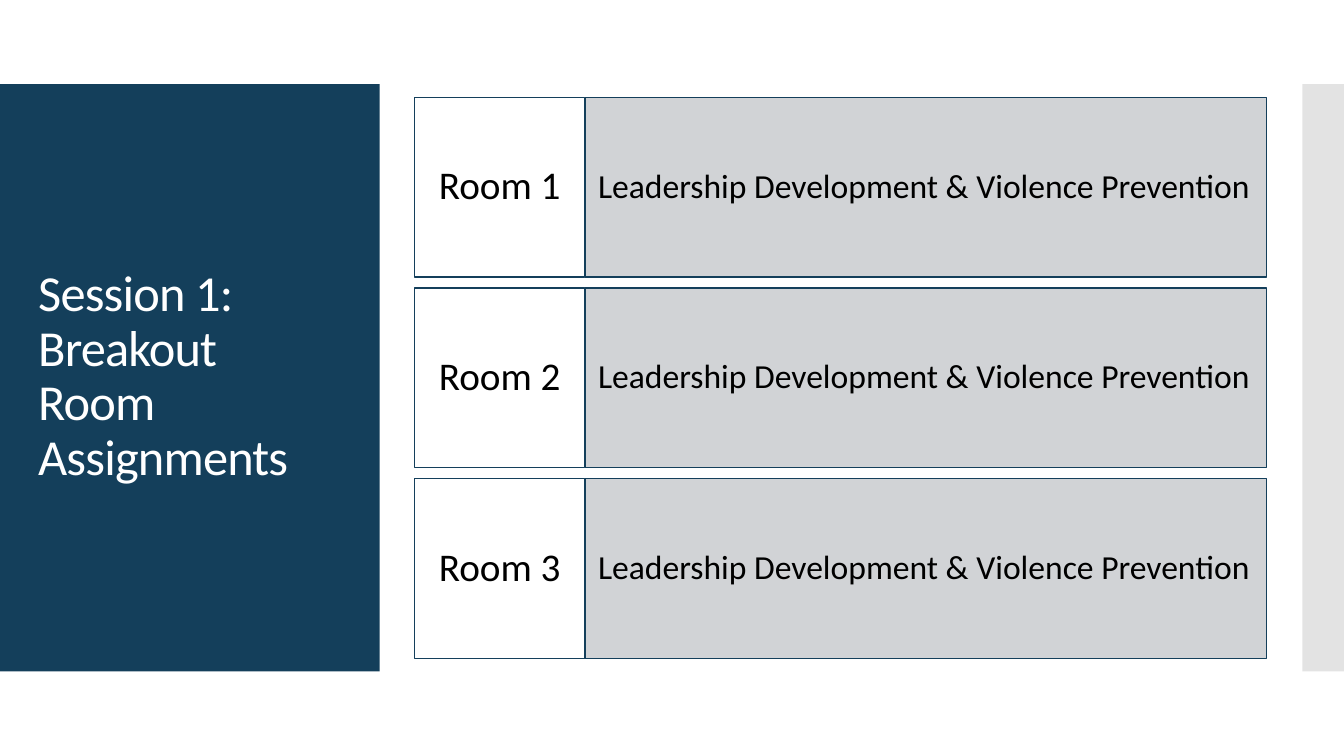
from lxml import etree
from pptx import Presentation
from pptx.dml import color
from pptx.enum import shapes, text
from pptx.oxml import ns
from pptx.util import Pt

HEX = {"navy": "143F5B", "grey": "D1D3D6", "edge": "C8C8C8",
       "white": "FFFFFF", "black": "000000"}
TOPIC = "Leadership Development & Violence Prevention"
ROOMS = [("Room 1", TOPIC), ("Room 2", TOPIC), ("Room 3", TOPIC)]


def rgb(name):
    return color.RGBColor.from_string(HEX[name])


def block(slide, box, fill, line=None):
    """Add a flat rectangle, outlined if a line colour is given."""
    rect = slide.shapes.add_shape(shapes.MSO_SHAPE.RECTANGLE, *map(Pt, box))
    rect.shadow.inherit = False
    rect.fill.solid()
    rect.fill.fore_color.rgb = rgb(fill)
    if line:
        rect.line.color.rgb = rgb(line)
        rect.line.width = Pt(0.85)
    else:
        rect.line.fill.background()
    return rect


def write(shape, words, size, ink, align, pad):
    """Set one centred-in-height paragraph; pad is (sides, top and bottom)."""
    frame = shape.text_frame
    side, end = map(Pt, pad)
    look = {"word_wrap": True, "vertical_anchor": text.MSO_ANCHOR.MIDDLE,
            "margin_left": side, "margin_right": side,
            "margin_top": end, "margin_bottom": end}
    for key, value in look.items():
        setattr(frame, key, value)
    para = frame.paragraphs[0]
    para.alignment = align
    para.line_spacing = 0.9
    run = para.add_run()
    run.text = words
    for key, value in {"name": "Calibri", "size": Pt(size)}.items():
        setattr(run.font, key, value)
    run.font.color.rgb = rgb(ink)
    return run


def panel(slide, box):
    """Title panel on the left."""
    left, top, width, height = box
    block(slide, box, "navy")
    area = (left + 20.2, top + 28.7, width - 39.8, height - 57.8)
    title = slide.shapes.add_textbox(*map(Pt, area))
    run = write(title, "Session 1: Breakout Room Assignments", 36, "white",
                text.PP_ALIGN.LEFT, (7.2, 3.6))
    run.font._element.set("spc", "-60")


def strip(slide, box):
    """Half-transparent strip on the right edge."""
    rect = block(slide, box, "edge")
    tone = rect.fill._xPr.find(".//" + ns.qn("a:srgbClr"))
    etree.SubElement(tone, ns.qn("a:alpha"), val="50000")


def rooms(slide, box, gap=7.8, label=121.7):
    """One row per room: its name, then its topic."""
    left, top, width, height = box
    tall = (height - gap * (len(ROOMS) - 1)) / len(ROOMS)
    for i, (room, topic) in enumerate(ROOMS):
        y = top + i * (tall + gap)
        body = block(slide, (left + label, y, width - label, tall),
                     "grey", "navy")
        write(body, topic, 24, "black", text.PP_ALIGN.LEFT, (9.4, 32.4))
        head = block(slide, (left, y, label, tall), "white", "navy")
        write(head, room, 28, "black", text.PP_ALIGN.CENTER, (6.5, 13))


def main():
    deck = Presentation()
    deck.slide_width, deck.slide_height = Pt(960), Pt(540)
    slide = deck.slides.add_slide(deck.slide_layouts[6])
    panel(slide, (0, 60, 271.2, 419.5))
    strip(slide, (930.3, 60, 29.7, 419.5))
    rooms(slide, (296.1, 69.6, 608.5, 400.6))
    deck.save("out.pptx")


if __name__ == "__main__":
    main()
